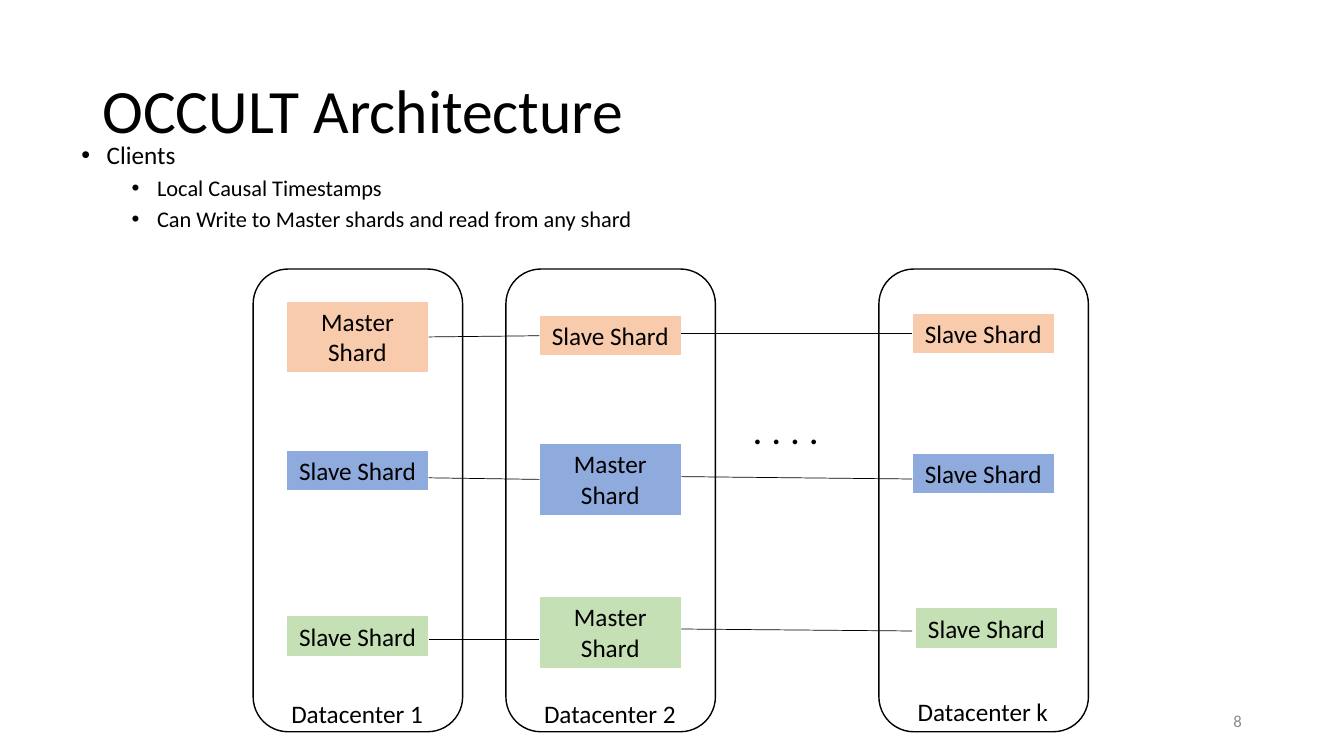
import pptx
import pptx.dml.color
import pptx.enum.shapes
import pptx.enum.text
import pptx.oxml.ns
import pptx.util
from lxml import etree

Cm = pptx.util.Cm
Pt = pptx.util.Pt
Align = pptx.enum.text.PP_ALIGN
Anchor = pptx.enum.text.MSO_ANCHOR
Shapes = pptx.enum.shapes.MSO_SHAPE

TITLE = "OCCULT Architecture"
BULLETS = [
    ("Clients", 0, 18, 10),
    ("Local Causal Timestamps", 1, 16, 5),
    ("Can Write to Master shards and read from any shard", 1, 16, 5),
]
DATACENTERS = [
    ("Datacenter 1", 6.38, 17.48),
    ("Datacenter 2", 12.75, 17.48),
    ("Datacenter k", 22.15, 17.42),
]
MASTER, SLAVE = "Master Shard", "Slave Shard"
SHARD_HEIGHTS = {MASTER: 1.8, SLAVE: 1.02}
SHARD_ROWS = [
    ("F8CBAD", [(MASTER, 7.59, 0), (SLAVE, 7.95, 0), (SLAVE, 7.9, 0)]),
    ("8FAADC", [(SLAVE, 11.35, 0), (MASTER, 11.18, 0), (SLAVE, 11.43, 0)]),
    ("C5E0B4", [(SLAVE, 15.52, 0), (MASTER, 15.04, 0), (SLAVE, 15.32, 0.08)]),
]
LINKS = [
    (0, 0, 8.48, 8.48, True, True),
    (0, 1, 8.41, 8.43, False, True),
    (1, 0, 12.04, 12.07, False, True),
    (1, 1, 12.01, 12.07, False, False),
    (2, 0, 16.1, 16.1, False, False),
    (2, 1, 15.85, 15.9, False, False),
]
CENTER_TOP, CENTER_WIDTH, CENTER_HEIGHT = 6.78, 5.28, 11.66
SHARD_INSET, SHARD_WIDTH = 0.84, 3.58
LABEL_INSET, LABEL_WIDTH = 0.18, 4.88


def color(value):
    return pptx.dml.color.RGBColor.from_string(value)


def apply(target, formats):
    for name, value in formats.items():
        setattr(target, name, value)


def write(paragraph, text, size, font_color="000000", **formats):
    apply(paragraph, formats)
    run = paragraph.add_run()
    run.text = text
    apply(run.font, {"name": "Calibri", "size": Pt(size)})
    run.font.color.rgb = color(font_color)


def add_text(slide, box, anchor=Anchor.TOP):
    shape = slide.shapes.add_textbox(*map(Cm, box))
    apply(shape.text_frame, {"word_wrap": True, "vertical_anchor": anchor})
    return shape.text_frame


def add_box(slide, kind, box, line_color, line_width, fill=None):
    shape = slide.shapes.add_shape(kind, *map(Cm, box))
    shape.shadow.inherit = False
    if fill:
        shape.fill.solid()
        shape.fill.fore_color.rgb = color(fill)
    else:
        shape.fill.background()
    shape.line.color.rgb = color(line_color)
    shape.line.width = Pt(line_width)
    return shape


def add_bullet(paragraph, level):
    properties = paragraph._p.get_or_add_pPr()
    properties.set("marL", str(Cm(0.64 + 1.27 * level)))
    properties.set("indent", str(-Cm(0.64)))
    font = etree.SubElement(properties, pptx.oxml.ns.qn("a:buFont"))
    font.set("typeface", "Arial")
    bullet = etree.SubElement(properties, pptx.oxml.ns.qn("a:buChar"))
    bullet.set("char", "•")


def add_shard(slide, column, fill, shard):
    text, top, shift = shard
    left = DATACENTERS[column][1] + SHARD_INSET + shift
    box = (left, top, SHARD_WIDTH, SHARD_HEIGHTS[text])
    shape = add_box(slide, Shapes.RECTANGLE, box, "FFFFFF", 0.75, fill)
    apply(shape.text_frame, {"word_wrap": True, "vertical_anchor": Anchor.TOP})
    write(shape.text_frame.paragraphs[0], text, 18, alignment=Align.CENTER)
    return shape


def add_link(slide, shards, link):
    row, column, start_y, end_y, join_start, join_end = link
    start_x = DATACENTERS[column][1] + SHARD_INSET + SHARD_WIDTH
    end_x = DATACENTERS[column + 1][1] + SHARD_INSET
    connector = slide.shapes.add_connector(
        pptx.enum.shapes.MSO_CONNECTOR.STRAIGHT,
        Cm(start_x), Cm(start_y), Cm(end_x), Cm(end_y))
    if join_start:
        connector.begin_connect(shards[row][column], 3)
    if join_end:
        connector.end_connect(shards[row][column + 1], 1)
    connector.line.color.rgb = color("000000")
    connector.line.width = Pt(0.5)
    etree.SubElement(connector._element.spPr, pptx.oxml.ns.qn("a:effectLst"))


def main():
    presentation = pptx.Presentation()
    apply(presentation, {"slide_width": Cm(33.87), "slide_height": Cm(19.05)})
    slide = presentation.slides.add_slide(presentation.slide_layouts[6])

    title = add_text(slide, (2.33, 1.01, 29.21, 3.68), Anchor.MIDDLE)
    write(title.paragraphs[0], TITLE, 44, line_spacing=0.9)

    body = add_text(slide, (1.8, 3.48, 24.84, 3.12))
    for index, (text, level, size, gap) in enumerate(BULLETS):
        paragraph = body.add_paragraph() if index else body.paragraphs[0]
        write(paragraph, text, size, level=level, line_spacing=0.9,
              space_before=Pt(gap))
        add_bullet(paragraph, level)

    for name, left, label_top in DATACENTERS:
        box = (left, CENTER_TOP, CENTER_WIDTH, CENTER_HEIGHT)
        add_box(slide, Shapes.ROUNDED_RECTANGLE, box, "000000", 1)
        label = add_text(
            slide, (left + LABEL_INSET, label_top, LABEL_WIDTH, 1.02))
        write(label.paragraphs[0], name, 18, alignment=Align.CENTER)

    dots = add_text(slide, (18.72, 10.08, 3.05, 1.45))
    write(dots.paragraphs[0], ". . . .", 28)

    shards = [
        [add_shard(slide, column, fill, shard)
         for column, shard in enumerate(row)]
        for fill, row in SHARD_ROWS
    ]
    for link in LINKS:
        add_link(slide, shards, link)

    number = add_text(slide, (23.93, 17.65, 7.62, 1.02), Anchor.MIDDLE)
    write(number.paragraphs[0], "8", 12, "8C8C8C", alignment=Align.RIGHT)

    presentation.save("out.pptx")


if __name__ == "__main__":
    main()
